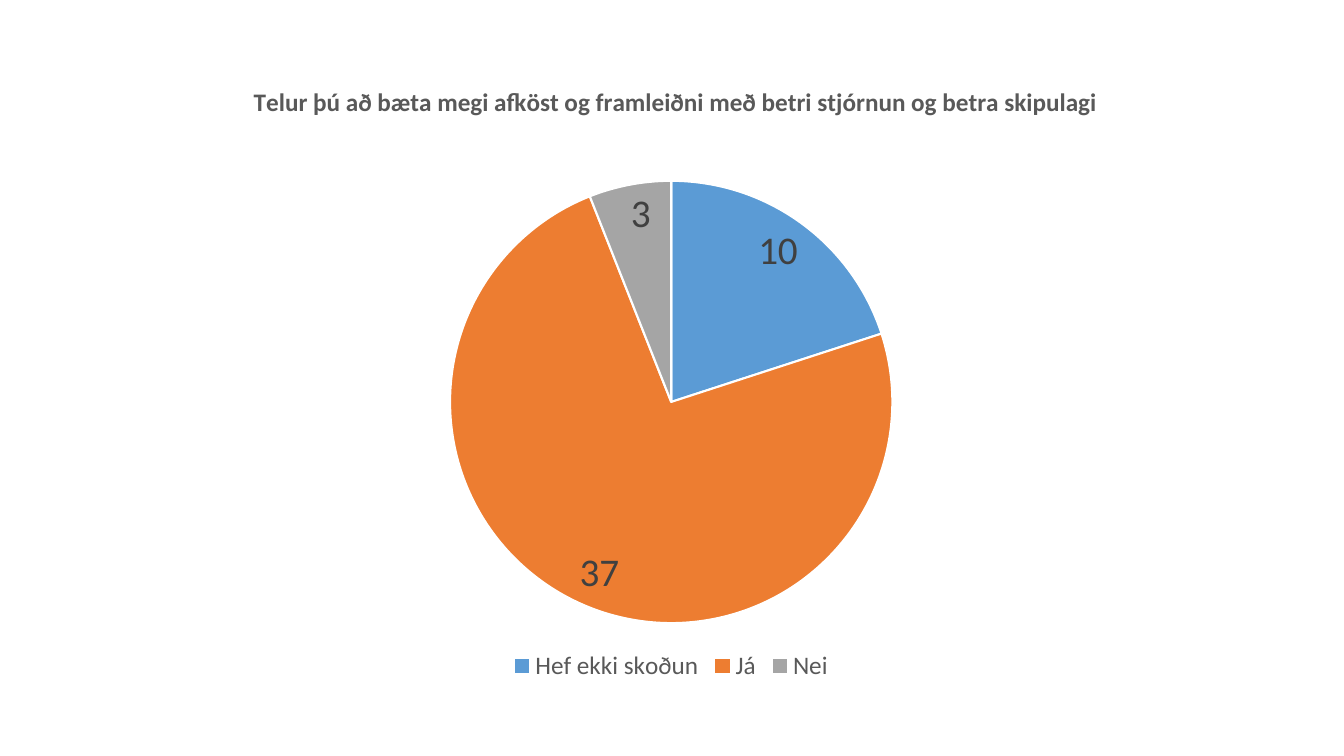
from dataclasses import dataclass

from lxml import etree
from pptx import Presentation
from pptx.chart.data import CategoryChartData
from pptx.dml.color import RGBColor
from pptx.enum.chart import XL_CHART_TYPE, XL_LABEL_POSITION, XL_LEGEND_POSITION
from pptx.util import Pt

PIE = XL_CHART_TYPE.PIE
INSIDE = XL_LABEL_POSITION.INSIDE_END
BOTTOM = XL_LEGEND_POSITION.BOTTOM
NS = "http://schemas.openxmlformats.org/drawingml/2006/chart"


@dataclass(frozen=True)
class Theme:
    face: str = "Calibri"
    text: str = "595959"
    label: str = "404040"
    edge: str = "FFFFFF"
    body: int = 18
    large: int = 28
    line: float = 1.5


@dataclass(frozen=True)
class Slice:
    name: str
    value: int
    color: str


THEME = Theme()
TITLE = "Telur þú að bæta megi afköst og framleiðni með betri stjórnun og betra skipulagi"
SLICES = [
    Slice("Hef ekki skoðun", 10, "5B9BD5"),
    Slice("Já", 37, "ED7D31"),
    Slice("Nei", 3, "A5A5A5"),
]


def style(font, size: int, color: str, bold: bool = False) -> None:
    form = {"name": THEME.face, "size": Pt(size), "bold": bold}
    for key, value in form.items():
        setattr(font, key, value)
    font.color.rgb = RGBColor.from_string(color)


def place(parent, index: int, **parts) -> None:
    """Give a chart part a fixed place, as fractions of the chart."""
    for old in parent.findall(f"{{{NS}}}layout"):
        parent.remove(old)
    layout = etree.Element(f"{{{NS}}}layout")
    manual = etree.SubElement(layout, f"{{{NS}}}manualLayout")
    for tag, value in parts.items():
        etree.SubElement(manual, f"{{{NS}}}{tag}").set("val", str(value))
    parent.insert(index, layout)


def draw_pie(slide, slices: list[Slice]) -> None:
    data = CategoryChartData()
    data.categories = [item.name for item in slices]
    data.add_series("Series 1", [item.value for item in slices])
    frame = slide.shapes.add_chart(PIE, Pt(82.8), Pt(38.9), Pt(793.4), Pt(451.4), data)
    chart = frame.chart
    style(chart.font, THEME.body, THEME.text)

    # Title
    chart.has_title = True
    title = chart.chart_title
    title.text_frame.text = TITLE
    style(title.text_frame.paragraphs[0].runs[0].font, THEME.body, THEME.text, True)
    place(title._element, 1, xMode="edge", yMode="edge", x=0.12, y=0.04)

    # Legend
    chart.has_legend = True
    chart.legend.position = BOTTOM
    chart.legend.include_in_layout = False
    style(chart.legend.font, THEME.body, THEME.text)

    # Slices
    plot = chart.plots[0]
    plot.vary_by_categories = True
    place(chart._chartSpace.chart.plotArea, 0, layoutTarget="inner",
          xMode="edge", yMode="edge", x=0.3, y=0.2, w=0.4, h=0.7)
    for index, item in enumerate(slices):
        form = plot.series[0].points[index].format
        form.fill.solid()
        form.fill.fore_color.rgb = RGBColor.from_string(item.color)
        form.line.color.rgb = RGBColor.from_string(THEME.edge)
        form.line.width = Pt(THEME.line)

    # Value labels
    labels = plot.series[0].data_labels
    marks = {"show_value": True, "show_percentage": False,
             "show_category_name": False, "position": INSIDE}
    for key, value in marks.items():
        setattr(labels, key, value)
    style(labels.font, THEME.large, THEME.label)


def main() -> None:
    deck = Presentation()
    deck.slide_width, deck.slide_height = Pt(960), Pt(540)
    slide = deck.slides.add_slide(deck.slide_layouts[6])
    draw_pie(slide, SLICES)
    deck.save("out.pptx")


if __name__ == "__main__":
    main()
